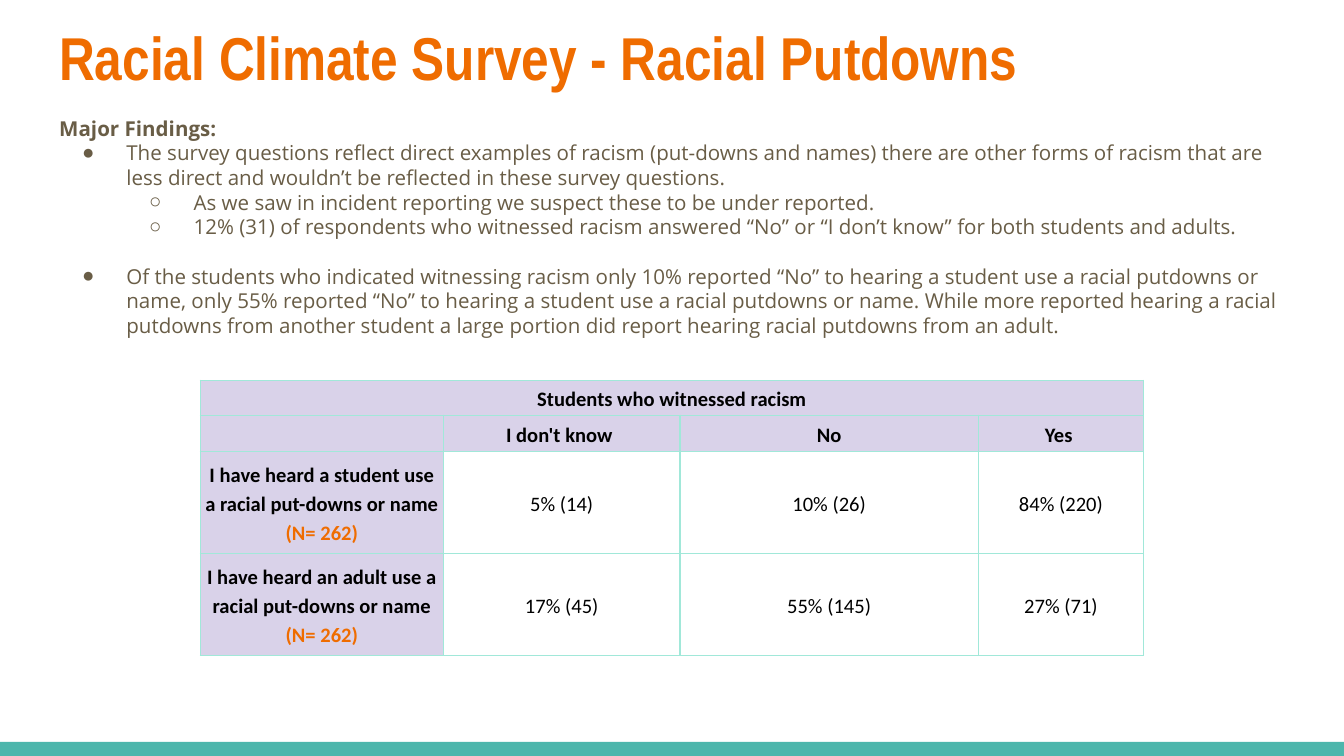
import pptx
import pptx.dml.color
import pptx.enum.shapes
import pptx.enum.text
import pptx.oxml
import pptx.oxml.ns
import pptx.util
from lxml import etree

Inches = pptx.util.Inches
Pt = pptx.util.Pt
qn = pptx.oxml.ns.qn
ALIGN = pptx.enum.text.PP_ALIGN
ANCHOR = pptx.enum.text.MSO_ANCHOR

ORANGE, BROWN, TEAL = "EF6C00", "695D46", "4DB6AC"
LAVENDER, MINT, BLACK = "D9D2E9", "A1E8D9", "000000"

TITLE = "Racial Climate Survey - Racial Putdowns"
# Each finding: text, outline level (None for the heading), space before in points
FINDINGS = [
    ("Major Findings:", None, 0),
    ("The survey questions reflect direct examples of racism (put-downs and names) "
     "there are other forms of racism that are less direct and wouldn’t be reflected "
     "in these survey questions.", 0, 0),
    ("As we saw in incident reporting we suspect these to be under reported.", 1, 0),
    ("12% (31) of respondents who witnessed racism answered “No” or “I don’t know” "
     "for both students and adults.", 1, 0),
    ("Of the students who indicated witnessing racism only 10% reported “No” to "
     "hearing a student use a racial putdowns or name, only 55% reported “No” to "
     "hearing a student use a racial putdowns or name. While more reported hearing a "
     "racial putdowns from another student a large portion did report hearing racial "
     "putdowns from an adult.", 0, 13.2),
]
SAMPLE = "(N= 262)"
ANSWERS = [
    ["Students who witnessed racism", "", "", ""],
    ["", "I don't know ", "No", "Yes "],
    ["I have heard a student use a racial put-downs or name ",
     "5% (14)", "10% (26)", "84% (220)"],
    ["I have heard an adult use a racial put-downs or name ",
     "17% (45)", "55% (145)", "27% (71)"],
]
COL_WIDTHS = [1.81, 1.76, 2.22, 1.23]
ROW_HEIGHTS = [0.26, 0.27, 0.76, 0.76]


def rgb(value):
    return pptx.dml.color.RGBColor.from_string(value)


def set_all(obj, values):
    for name, value in values.items():
        setattr(obj, name, value)


class SurveySlide:
    title_font = {"name": "Arial Narrow", "size": Pt(32.4), "bold": True}
    body_font = {"name": "Open Sans", "size": Pt(11)}
    table_font = {"name": "Calibri", "size": Pt(11)}
    frame = {"word_wrap": True, "vertical_anchor": ANCHOR.TOP,
             "auto_size": pptx.enum.text.MSO_AUTO_SIZE.NONE,
             **{f"margin_{side}": Inches(0.1)
                for side in ("left", "top", "right", "bottom")}}
    cell_format = {"vertical_anchor": ANCHOR.MIDDLE,
                   "margin_left": Inches(0.03), "margin_right": Inches(0.03),
                   "margin_top": 0, "margin_bottom": 0}

    def __init__(self, prs):
        self.s = prs.slides.add_slide(prs.slide_layouts[1])

    def run(self, p, text, font, color, bold):
        r = p.add_run()
        r.text = text
        set_all(r.font, {**font, "bold": bold})
        r.font.color.rgb = rgb(color)

    def place(self, sp, left, top, width, height):
        set_all(sp, {"left": Inches(left), "top": Inches(top),
                     "width": Inches(width), "height": Inches(height)})
        set_all(sp.text_frame, self.frame)
        return sp.text_frame

    def bar(self, left, top, width, height, color):
        sp = self.s.shapes.add_shape(
            pptx.enum.shapes.MSO_SHAPE.RECTANGLE,
            Inches(left), Inches(top), Inches(width), Inches(height))
        sp.shadow.inherit = False
        sp.fill.solid()
        sp.fill.fore_color.rgb = rgb(color)
        sp.line.fill.background()

    def title(self, text, *box):
        p = self.place(self.s.shapes.title, *box).paragraphs[0]
        set_all(p, {"alignment": ALIGN.LEFT, "line_spacing": 0.85})
        self.run(p, text, self.title_font, ORANGE, True)

    def bullet(self, p, level):
        """Set the indent and marker; level None means no marker."""
        pPr = p._p.get_or_add_pPr()
        if level is None:
            pPr.set("marL", "0")
            pPr.set("indent", "0")
            etree.SubElement(pPr, qn("a:buNone"))
            return
        p.level = level
        pPr.set("marL", str(Inches(0.5 * (level + 1))))
        pPr.set("indent", str(Inches(-0.33)))
        color = etree.SubElement(pPr, qn("a:buClr"))
        etree.SubElement(color, qn("a:srgbClr"), val=BROWN)
        etree.SubElement(pPr, qn("a:buChar"), char="●○"[level])

    def findings(self, items, *box):
        tf = self.place(self.s.placeholders[1], *box)
        for i, (text, level, before) in enumerate(items):
            p = tf.add_paragraph() if i else tf.paragraphs[0]
            set_all(p, {"alignment": ALIGN.LEFT, "line_spacing": 1.0,
                        "space_before": Pt(before), "space_after": Pt(0)})
            self.bullet(p, level)
            self.run(p, text, self.body_font, BROWN, level is None)

    def borders(self, cell):
        tcPr = cell._tc.get_or_add_tcPr()
        for side in "LRTB":
            ln = etree.SubElement(tcPr, qn(f"a:ln{side}"), w=str(Pt(0.75)))
            fill = etree.SubElement(ln, qn("a:solidFill"))
            etree.SubElement(fill, qn("a:srgbClr"), val=MINT)

    def cell(self, cell, text, header, sample):
        set_all(cell, self.cell_format)
        self.borders(cell)
        if header:
            cell.fill.solid()
            cell.fill.fore_color.rgb = rgb(LAVENDER)
        else:
            cell.fill.background()
        p = cell.text_frame.paragraphs[0]
        set_all(p, {"alignment": ALIGN.CENTER, "line_spacing": 1.15})
        if text:
            self.run(p, text, self.table_font, BLACK, header)
        else:  # keeps an empty cell from growing to the default text size
            etree.SubElement(p._p, qn("a:endParaRPr"), sz="1100")
        if sample:
            self.run(p, SAMPLE, self.table_font, ORANGE, True)

    def table(self, rows, left, top):
        table = self.s.shapes.add_table(
            len(rows), len(COL_WIDTHS), Inches(left), Inches(top),
            Inches(sum(COL_WIDTHS)), Inches(sum(ROW_HEIGHTS))).table
        set_all(table, {"first_row": False, "horz_banding": False})
        for column, width in zip(table.columns, COL_WIDTHS):
            column.width = Inches(width)
        for row, height in zip(table.rows, ROW_HEIGHTS):
            row.height = Inches(height)
        for i, texts in enumerate(rows):
            for j, text in enumerate(texts):
                self.cell(table.cell(i, j), text, header=i < 2 or j == 0,
                          sample=i >= 2 and j == 0)
        table.cell(0, 0).merge(table.cell(0, len(COL_WIDTHS) - 1))


def main():
    prs = pptx.Presentation()
    set_all(prs, {"slide_width": Inches(10), "slide_height": Inches(10 * 9 / 16)})
    slide = SurveySlide(prs)
    slide.bar(0, 5.52, 10, 0.11, TEAL)
    slide.title(TITLE, 0.34, 0.13, 9.32, 0.63)
    slide.findings(FINDINGS, 0.34, 0.76, 9.32, 1.94)
    slide.table(ANSWERS, 1.49, 2.83)
    prs.save("out.pptx")


if __name__ == "__main__":
    main()
